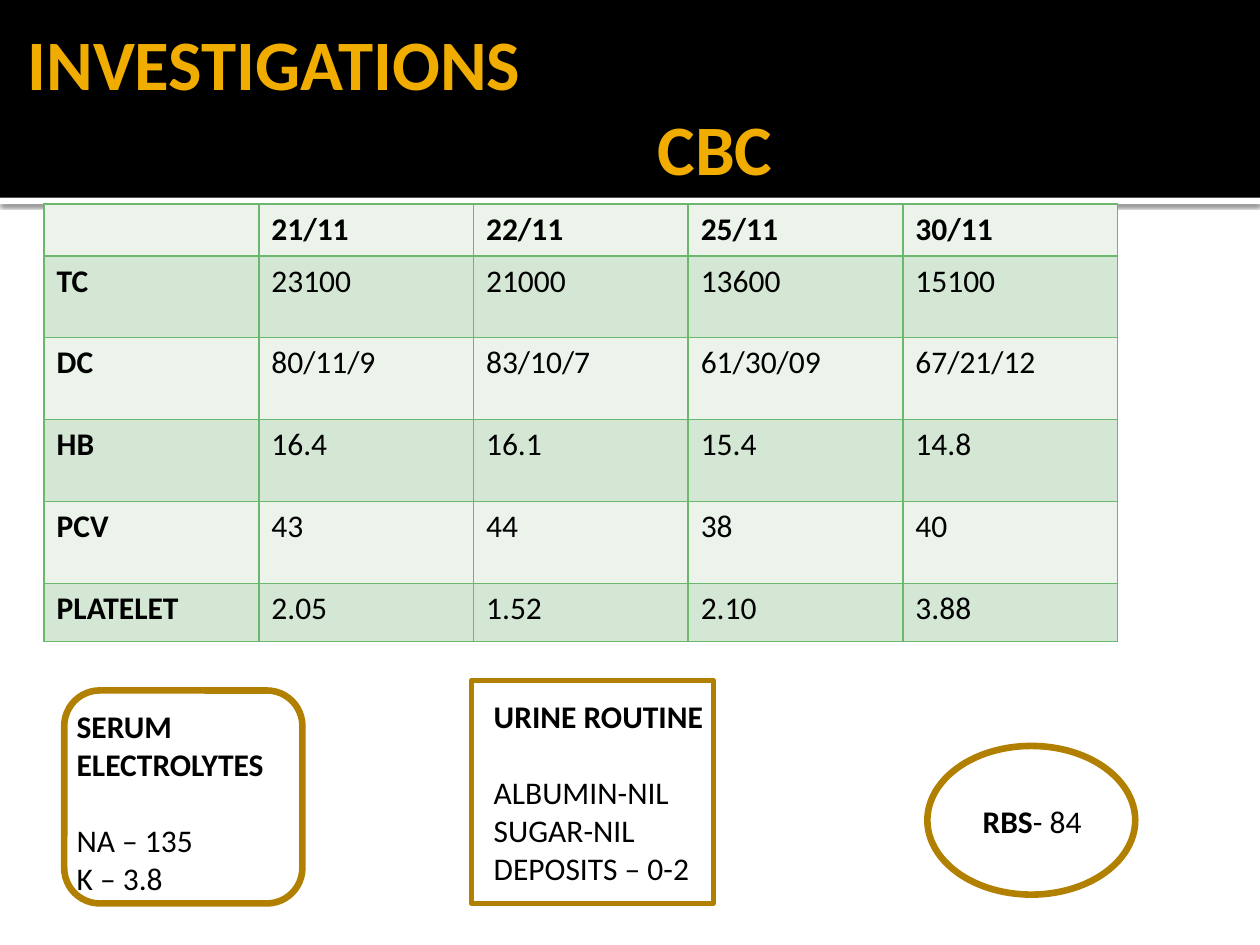
from lxml.etree import SubElement
from pptx import Presentation
from pptx.dml.color import RGBColor
from pptx.enum.shapes import MSO_SHAPE as SHAPE
from pptx.enum.text import MSO_ANCHOR as ANCHOR
from pptx.oxml.ns import qn
from pptx.util import Inches, Pt

FONT = "Calibri"
BLACK, WHITE = "000000", "FFFFFF"
AMBER, OCHRE = "F0AD00", "B28000"
GRID_GREEN, PALE_GREEN, MID_GREEN = "6BB76D", "EBF3EB", "D4E6D4"

CBC = [
    ["", "21/11", "22/11", "25/11", "30/11"],
    ["TC", "23100", "21000", "13600", "15100"],
    ["DC", "80/11/9", "83/10/7", "61/30/09", "67/21/12"],
    ["HB", "16.4", "16.1", "15.4", "14.8"],
    ["PCV", "43", "44", "38", "40"],
    ["PLATELET", "2.05", "1.52", "2.10", "3.88"],
]
ROW_HEIGHTS = [0.41, 0.65, 0.65, 0.65, 0.65, 0.46]


def color(hex_code):
    return RGBColor.from_string(hex_code)


def write(paragraph, text, size=18, bold=False, ink=BLACK, before=0, indent=0):
    """Add one formatted run to a paragraph."""
    run = paragraph.add_run()
    run.text = text
    run.font.name = FONT
    run.font.size = Pt(size)
    run.font.bold = bold
    run.font.color.rgb = color(ink)
    if before:
        paragraph.space_before = Pt(before)
    if indent:
        paragraph._p.get_or_add_pPr().set("marL", str(Inches(indent)))


def add_text_area(slide, left, top, width, height, wrap=True):
    frame = slide.shapes.add_textbox(
        Inches(left), Inches(top), Inches(width), Inches(height)).text_frame
    frame.word_wrap = wrap
    return frame


def add_panel(slide, kind, left, top, width, height, fill=None, line=None, weight=3):
    panel = slide.shapes.add_shape(
        kind, Inches(left), Inches(top), Inches(width), Inches(height))
    panel.shadow.inherit = False
    if fill:
        panel.fill.solid()
        panel.fill.fore_color.rgb = color(fill)
    else:
        panel.fill.background()
    if line:
        panel.line.color.rgb = color(line)
        panel.line.width = Pt(weight)
    else:
        panel.line.fill.background()
    return panel


def add_shadow(panel):
    effects = panel._element.spPr.find(qn("a:effectLst"))
    shadow = SubElement(effects, qn("a:outerShdw"), blurRad=str(Pt(2.5)),
                        dist=str(Pt(0.8)), dir="5400000", rotWithShape="0")
    tint = SubElement(shadow, qn("a:srgbClr"), val=BLACK)
    SubElement(tint, qn("a:alpha"), val="60000")


def add_borders(cell):
    properties = cell._tc.get_or_add_tcPr()
    for side in ("lnL", "lnR", "lnT", "lnB"):
        border = SubElement(properties, qn(f"a:{side}"), w=str(Pt(1)))
        fill = SubElement(border, qn("a:solidFill"))
        SubElement(fill, qn("a:srgbClr"), val=GRID_GREEN)


def add_header(slide):
    rule = add_panel(slide, SHAPE.RECTANGLE, 0, 1.57, 10, 0.05, fill=WHITE)
    add_shadow(rule)
    add_panel(slide, SHAPE.RECTANGLE, 0, 0, 10, 1.57, fill=BLACK)
    title = add_text_area(slide, 0.12, 0.36, 7.01, 0.94)
    title.vertical_anchor = ANCHOR.MIDDLE
    title.margin_right = Inches(0.05)
    write(title.paragraphs[0], "INVESTIGATIONS", size=40.5, bold=True, ink=AMBER)
    write(title.add_paragraph(), "CBC", size=40.5, bold=True, ink=AMBER, indent=5)


def add_cbc_table(slide):
    table = slide.shapes.add_table(
        len(CBC), len(CBC[0]), Inches(0.35), Inches(1.62),
        Inches(8.52), Inches(sum(ROW_HEIGHTS))).table
    for row, height in zip(table.rows, ROW_HEIGHTS):
        row.height = Inches(height)
    for r, values in enumerate(CBC):
        for c, value in enumerate(values):
            cell = table.cell(r, c)
            add_borders(cell)
            cell.fill.solid()
            cell.fill.fore_color.rgb = color(MID_GREEN if r % 2 else PALE_GREEN)
            if value:
                write(cell.text_frame.paragraphs[0], value, bold=r == 0 or c == 0)


def add_results(slide, heading, results, left, top, width, wrap=True):
    frame = add_text_area(slide, left, top, width, 1.62, wrap)
    write(frame.paragraphs[0], heading, bold=True)
    for i, result in enumerate(results):
        # One line of space separates the heading from its results
        write(frame.add_paragraph(), result, before=0 if i else 22)


def main():
    prs = Presentation()
    prs.slide_width, prs.slide_height = Inches(10), Inches(7.5)
    slide = prs.slides.add_slide(prs.slide_layouts[6])

    add_header(slide)
    add_cbc_table(slide)

    # Other test results
    add_results(slide, "SERUM ELECTROLYTES", ["NA – 135", "K – 3.8"],
                0.51, 5.56, 2.2)
    add_results(slide, "URINE ROUTINE",
                ["ALBUMIN-NIL", "SUGAR-NIL", "DEPOSITS – 0-2"],
                3.82, 5.48, 1.88, wrap=False)
    sugar = add_text_area(slide, 7.7, 6.32, 1, 0.4, wrap=False).paragraphs[0]
    write(sugar, "RBS", bold=True)
    write(sugar, "- 84")

    # Outlines around the results
    add_panel(slide, SHAPE.ROUNDED_RECTANGLE, 0.51, 5.48, 1.89, 1.69,
              line=OCHRE, weight=3.78)
    add_panel(slide, SHAPE.OVAL, 7.36, 5.92, 1.65, 1.18, line=OCHRE, weight=3.78)
    add_panel(slide, SHAPE.RECTANGLE, 3.74, 5.4, 1.92, 1.77, line=OCHRE)

    prs.save("out.pptx")


if __name__ == "__main__":
    main()
